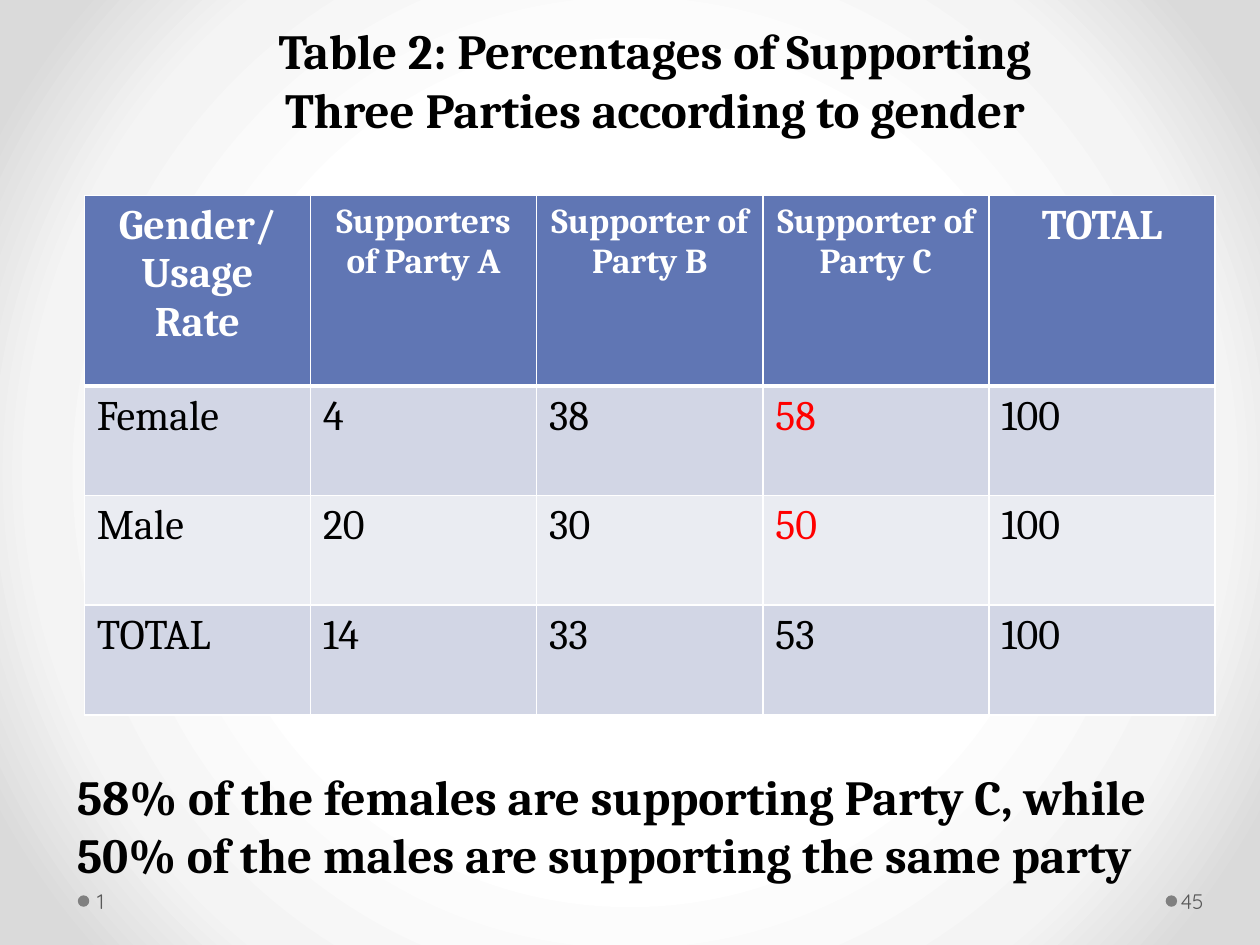
from pptx import Presentation
from pptx import util as u
from pptx.dml.color import RGBColor
from pptx.enum import shapes, text
from pptx.oxml import parse_xml
from pptx.oxml.ns import nsdecls

# Content
TITLE = "Table 2: Percentages of Supporting Three Parties according to gender"
HEADERS = [("Gender/ Usage Rate", 24), ("Supporters of Party A", 20),
           ("Supporter of Party B", 20), ("Supporter of Party C", 20), ("TOTAL", 24)]
ROWS = [("Female", "4", "38", "58", "100"),
        ("Male", "20", "30", "50", "100"),
        ("TOTAL", "14", "33", "53", "100")]
HIGHLIGHTS = {(1, 3), (2, 3)}  # table row, column
CONCLUSION = ("58% of the females are supporting Party C, "
              "while 50% of the males are supporting the same party")
# text, left, width, left inset, right inset, left of the dot
FOOTERS = [("45", 23.72, 1.55, 0.08, 0.13, 23.5),
           ("1", 1.83, 7.9, 0.13, 0.25, 1.57)]

# Style
SERIF, SANS = "Cambria", "Quicksand"
BLACK, WHITE, RED, GREY, DOT = "000000", "FFFFFF", "FF0000", "595959", "808080"
HEADER_FILL, BANDS = "6076B4", ("D2D6E5", "EAECF2")
GRADIENT = [(50, "FFFFFF"), (76, "F4F4F4"), (92, "DADADA")]
COLUMN_WIDTH, HEADER_HEIGHT, ROW_HEIGHT = 4.56, 3.84, 2.21


def color(value):
    return RGBColor.from_string(value)


def fill_solid(target, value):
    target.fill.solid()
    target.fill.fore_color.rgb = color(value)


def write(frame, content, size, value, bold=False, font=SERIF, align=text.PP_ALIGN.LEFT):
    paragraph = frame.paragraphs[0]
    paragraph.alignment = align
    run = paragraph.add_run()
    run.text = content
    run.font.name, run.font.size, run.font.bold = font, u.Pt(size), bold
    run.font.color.rgb = color(value)


def place(shape, left, top, width, height):
    shape.left, shape.top = u.Cm(left), u.Cm(top)
    shape.width, shape.height = u.Cm(width), u.Cm(height)


def add_text(slide, left, top, width, height):
    shape = slide.shapes.add_textbox(u.Cm(left), u.Cm(top), u.Cm(width), u.Cm(height))
    shape.text_frame.word_wrap = True
    return shape.text_frame


def set_background(slide):
    slide.background.fill.gradient()
    stops = "".join(f'<a:gs pos="{position * 1000}"><a:srgbClr val="{value}"/></a:gs>'
                    for position, value in GRADIENT)
    gradient = parse_xml(
        f'<a:gradFill {nsdecls("a")} rotWithShape="1"><a:gsLst>{stops}</a:gsLst>'
        '<a:path path="circle"><a:fillToRect l="50000" t="50000" r="50000" b="50000"/>'
        '</a:path></a:gradFill>')
    old = slide.background._cSld.find(".//" + gradient.tag)
    old.getparent().replace(old, gradient)


def set_borders(cell, top, bottom):
    properties = cell._tc.get_or_add_tcPr()
    for index, (side, width) in enumerate([("L", 1), ("R", 1), ("T", top), ("B", bottom)]):
        properties.insert(index, parse_xml(
            f'<a:ln{side} {nsdecls("a")} w="{u.Pt(width)}"><a:solidFill>'
            f'<a:srgbClr val="{WHITE}"/></a:solidFill></a:ln{side}>'))


def add_support_table(slide):
    heights = [HEADER_HEIGHT] + [ROW_HEIGHT] * len(ROWS)
    table = slide.shapes.add_table(
        len(heights), len(HEADERS), u.Cm(1.7), u.Cm(3.94),
        u.Cm(COLUMN_WIDTH * len(HEADERS)), u.Cm(sum(heights))).table
    for column in table.columns:
        column.width = u.Cm(COLUMN_WIDTH)
    for row, height in zip(table.rows, heights):
        row.height = u.Cm(height)

    for index, (label, size) in enumerate(HEADERS):
        cell = table.cell(0, index)
        fill_solid(cell, HEADER_FILL)
        set_borders(cell, 1, 3)
        write(cell.text_frame, label, size, WHITE, True, align=text.PP_ALIGN.CENTER)
    for row, values in enumerate(ROWS, 1):
        for index, value in enumerate(values):
            cell = table.cell(row, index)
            fill_solid(cell, BANDS[(row - 1) % 2])
            set_borders(cell, 3 if row == 1 else 1, 1)
            write(cell.text_frame, value, 24, RED if (row, index) in HIGHLIGHTS else BLACK)


def add_footer(slide, label, left, width, inset_left, inset_right, dot_left):
    dot = slide.shapes.add_shape(shapes.MSO_SHAPE.OVAL, u.Cm(dot_left), u.Cm(18.05),
                                 u.Cm(0.23), u.Cm(0.23))
    dot.shadow.inherit = False
    fill_solid(dot, DOT)
    dot.line.fill.background()
    frame = add_text(slide, left, 17.65, width, 1.02)
    frame.margin_left, frame.margin_right = u.Cm(inset_left), u.Cm(inset_right)
    frame.vertical_anchor = text.MSO_ANCHOR.MIDDLE
    write(frame, label, 12, GREY, font=SANS)


def main():
    presentation = Presentation()
    presentation.slide_width, presentation.slide_height = u.Cm(25.4), u.Cm(19.05)
    slide = presentation.slides.add_slide(presentation.slide_layouts[5])
    set_background(slide)

    # Title
    title = slide.shapes.title
    place(title, 4.5, 0.28, 17.4, 2.64)
    title.text_frame.auto_size = text.MSO_AUTO_SIZE.NONE
    title.text_frame.vertical_anchor = text.MSO_ANCHOR.TOP
    write(title.text_frame, TITLE, 28, BLACK, True, align=text.PP_ALIGN.CENTER)

    # Table, conclusion and footers
    add_support_table(slide)
    write(add_text(slide, 1.3, 15.32, 23.6, 2.64), CONCLUSION, 28, BLACK, True)
    for footer in FOOTERS:
        add_footer(slide, *footer)

    presentation.save("out.pptx")


if __name__ == "__main__":
    main()
